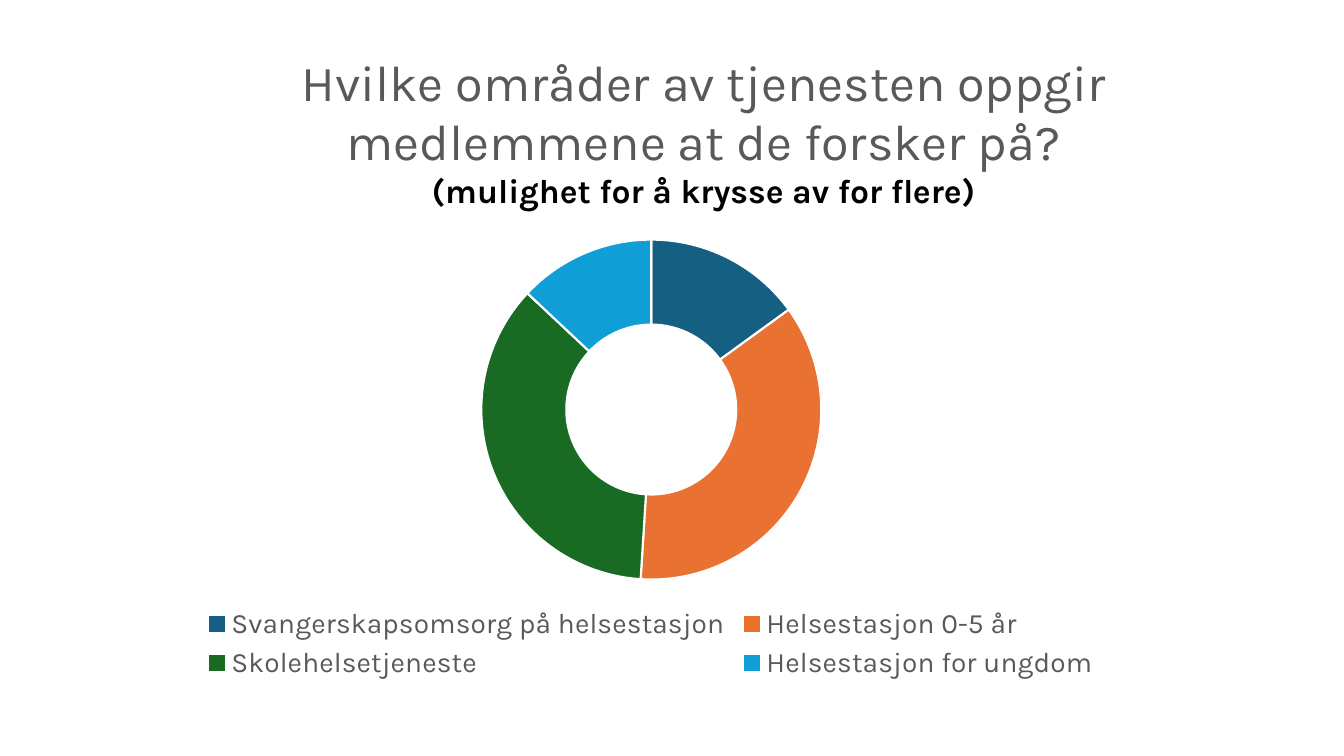
import pptx
import pptx.chart.data
import pptx.dml.color
import pptx.enum.chart
import pptx.enum.text
import pptx.oxml
import pptx.oxml.ns
import pptx.util

Pt = pptx.util.Pt
qn = pptx.oxml.ns.qn

# Content
QUESTION = "Hvilke områder av tjenesten oppgir medlemmene at de forsker på?"
HINT = "(mulighet for å krysse av for flere)"
SERIES_NAME = "Series 1"
AREAS = [
    ("Svangerskapsomsorg på helsestasjon", 15, "156082"),
    ("Helsestasjon 0-5 år", 36, "E97132"),
    ("Skolehelsetjeneste", 36, "196B24"),
    ("Helsestasjon for ungdom", 13, "0F9ED5"),
]

THEME = {
    "font": "Karla",
    "grey": "595959",
    "black": "000000",
    "white": "FFFFFF",
    "question_size": 36,
    "hint_size": 24,
    "legend_size": 20,
    "base_size": 10,
}

# Geometry in points
SLIDE_SIZE = (960, 540)
CHART_BOX = (35.3, 28.8, 859, 460.8)
RING_SIZE = 243
RING_TOP = 171
TITLE_CORNER = (213, 36)


def rgb(code):
    return pptx.dml.color.RGBColor.from_string(code)


def format_font(font, size, color, bold=False):
    font.name = THEME["font"]
    font.size = Pt(size)
    font.bold = bold
    font.color.rgb = rgb(color)


def write(paragraph, text, size, color, bold=False):
    paragraph.alignment = pptx.enum.text.PP_ALIGN.CENTER
    run = paragraph.add_run()
    run.text = text
    format_font(run.font, size, color, bold)


def place(part, index, left, top, width=None, height=None, inner=False):
    """Give a chart part a fixed place, from slide points to chart fractions."""
    chart_left, chart_top, chart_width, chart_height = CHART_BOX
    fractions = {"x": (left - chart_left) / chart_width,
                 "y": (top - chart_top) / chart_height}
    if width:
        fractions |= {"w": width / chart_width, "h": height / chart_height}
    settings = [("layoutTarget", "inner")] if inner else []
    settings += [("xMode", "edge"), ("yMode", "edge")]
    settings += [(key, f"{value:.3f}") for key, value in fractions.items()]
    body = "".join(f'<c:{tag} val="{value}"/>' for tag, value in settings)
    for old in part.findall(qn("c:layout")):
        part.remove(old)
    part.insert(index, pptx.oxml.parse_xml(
        f'<c:layout {pptx.oxml.ns.nsdecls("c")}>'
        f"<c:manualLayout>{body}</c:manualLayout></c:layout>"))


def add_ring(slide):
    areas = pptx.chart.data.CategoryChartData()
    areas.categories = [name for name, _, _ in AREAS]
    areas.add_series(SERIES_NAME, [share for _, share, _ in AREAS])
    chart = slide.shapes.add_chart(
        pptx.enum.chart.XL_CHART_TYPE.DOUGHNUT,
        *map(Pt, CHART_BOX), areas).chart
    format_font(chart.font, THEME["base_size"], THEME["black"])

    # Ring
    ring = chart.plots[0]
    ring.vary_by_categories = True
    ring.has_data_labels = False
    for index, (_, _, color) in enumerate(AREAS):
        sector = ring.series[0].points[index].format
        sector.fill.solid()
        sector.fill.fore_color.rgb = rgb(color)
        sector.line.color.rgb = rgb(THEME["white"])
        sector.line.width = Pt(1.5)
    plot_area = chart.element.find(".//" + qn("c:plotArea"))
    plot_area.find(".//" + qn("c:holeSize")).set("val", "75")
    ring_left = CHART_BOX[0] + (CHART_BOX[2] - RING_SIZE) / 2
    place(plot_area, 0, ring_left, RING_TOP, RING_SIZE, RING_SIZE, inner=True)

    # Title
    chart.has_title = True
    heading = chart.chart_title.text_frame
    write(heading.paragraphs[0], QUESTION,
          size=THEME["question_size"], color=THEME["grey"])
    write(heading.add_paragraph(), HINT,
          size=THEME["hint_size"], color=THEME["black"], bold=True)
    chart.chart_title.include_in_layout = False
    place(chart.element.find(".//" + qn("c:title")), 1, *TITLE_CORNER)

    # Legend
    chart.has_legend = True
    chart.legend.position = pptx.enum.chart.XL_LEGEND_POSITION.BOTTOM
    chart.legend.include_in_layout = False
    format_font(chart.legend.font, THEME["legend_size"], THEME["grey"])


def main():
    deck = pptx.Presentation()
    deck.slide_width, deck.slide_height = map(Pt, SLIDE_SIZE)
    add_ring(deck.slides.add_slide(deck.slide_layouts[6]))
    deck.save("out.pptx")


if __name__ == "__main__":
    main()
